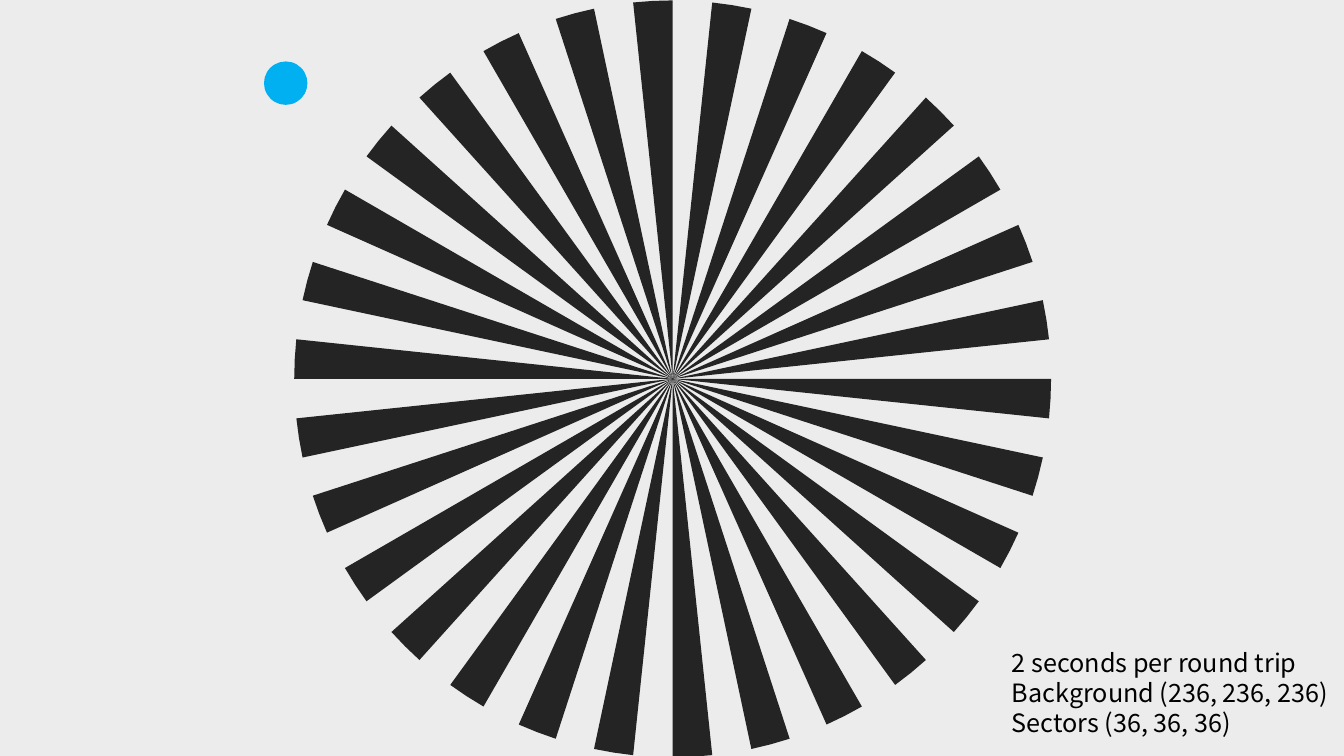
"""Build a slide with a wheel of rotating sectors, a dot and a caption."""
from dataclasses import dataclass
from math import cos, radians, sin

from pptx import Presentation
from pptx.dml.color import RGBColor as RGB
from pptx.enum.shapes import MSO_SHAPE as SHAPE
from pptx.enum.text import MSO_AUTO_SIZE as AUTO
from pptx.util import Pt

CAPTION = [
    "2 seconds per round trip",
    "Background (236, 236, 236)",
    "Sectors (36, 36, 36)",
]
SLIDE = (960, 540)
WHEEL = {"cx": 480.5, "cy": 270.6, "radius": 270.3, "sectors": 30}
DOT = (188.6, 43.9, 31, 31)
CAPTION_BOX = (715.7, 458.6, 244.3, 72.7)


@dataclass(frozen=True)
class Theme:
    """Colours and type of the slide."""
    background: RGB = RGB(236, 236, 236)
    sector: RGB = RGB(36, 36, 36)
    dot: RGB = RGB(0, 176, 240)
    text: RGB = RGB(0, 0, 0)
    font: str = "Noto Sans CJK JP"
    size: int = 18


THEME = Theme()


def paint(sp, color):
    """Give a shape a flat fill with no outline or shadow."""
    sp.shadow.inherit = False
    sp.fill.solid()
    sp.fill.fore_color.rgb = color
    sp.line.fill.background()


def rim_point(angle):
    """Return the point on the wheel's rim, clockwise from the right."""
    a = radians(angle)
    return (Pt(WHEEL["cx"] + WHEEL["radius"] * cos(a)),
            Pt(WHEEL["cy"] + WHEEL["radius"] * sin(a)))


def add_wheel(shapes):
    """Draw the sectors, each followed by a gap of the same angle."""
    step = 360 / WHEEL["sectors"]
    for i in range(WHEEL["sectors"]):
        start = -i * step
        fb = shapes.build_freeform(Pt(WHEEL["cx"]), Pt(WHEEL["cy"]))
        fb.add_line_segments([rim_point(start + step * part) for part in (0, 0.25, 0.5)])
        paint(fb.convert_to_shape(), THEME.sector)


def add_caption(shapes):
    """Write the caption lines in the lower right corner."""
    tf = shapes.add_textbox(*map(Pt, CAPTION_BOX)).text_frame
    tf.word_wrap = False
    tf.auto_size = AUTO.SHAPE_TO_FIT_TEXT
    tf.text = "\n".join(CAPTION)
    for p in tf.paragraphs:
        p.font.name = THEME.font
        p.font.size = Pt(THEME.size)
        p.font.color.rgb = THEME.text


def main():
    """Build and save the presentation."""
    prs = Presentation()
    prs.slide_width, prs.slide_height = map(Pt, SLIDE)
    s = prs.slides.add_slide(prs.slide_layouts[6])
    s.background.fill.solid()
    s.background.fill.fore_color.rgb = THEME.background
    add_wheel(s.shapes)
    add_caption(s.shapes)
    paint(s.shapes.add_shape(SHAPE.OVAL, *map(Pt, DOT)), THEME.dot)
    prs.save("out.pptx")


if __name__ == "__main__":
    main()
